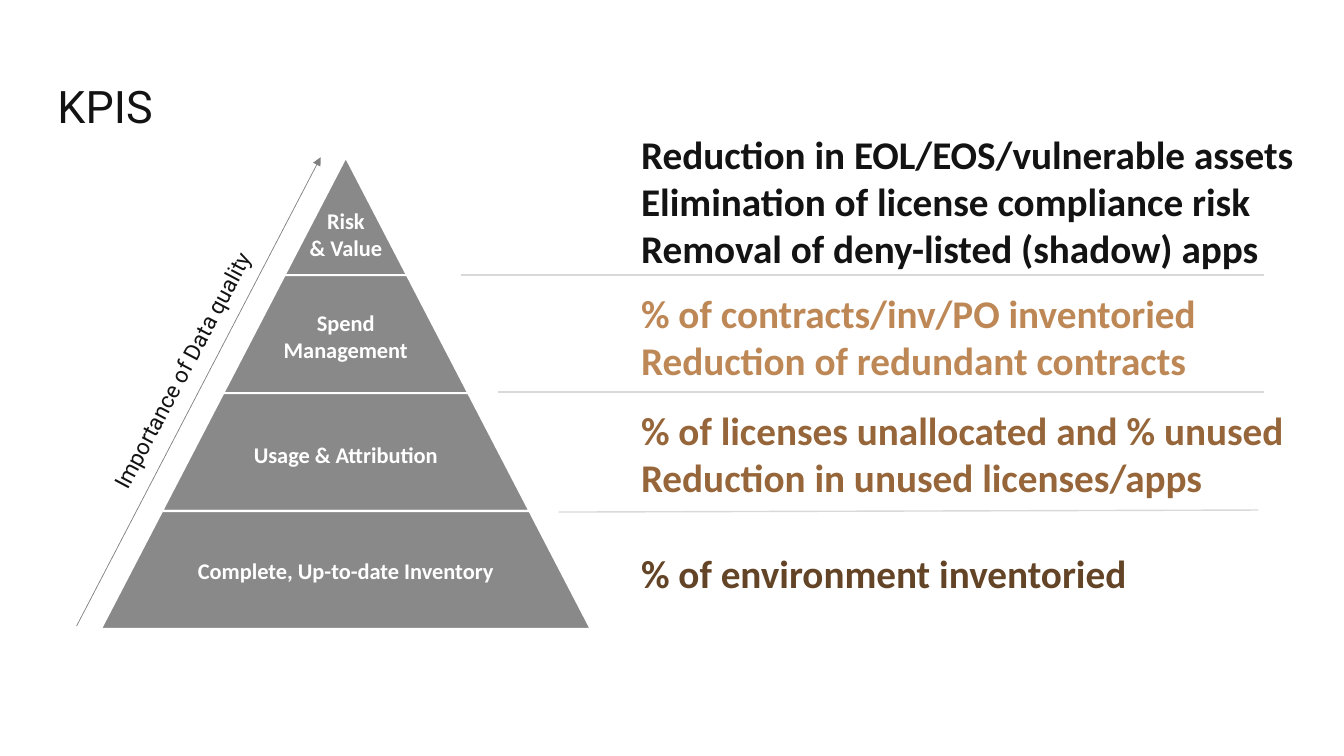
from lxml import etree
from pptx import Presentation
from pptx.dml.color import RGBColor
from pptx.enum import dml, shapes, text
from pptx.oxml import ns
from pptx.util import Inches, Pt

INK, WHITE, TIER_GREY = "131313", "FFFFFF", "898989"

# label lines, label top, label width, label height
TIERS = [
    (["Risk", "& Value"], 2.01, 1.12, 0.64),
    (["Spend", "Management"], 3.02, 2.07, 0.64),
    (["Usage & Attribution"], 4.33, 2.77, 0.37),
    (["Complete, Up-to-date Inventory"], 5.48, 3.2, 0.37),
]
# KPI lines, colour, top, width, height
KPIS = [
    (["Reduction in EOL/EOS/vulnerable assets",
      "Elimination of license compliance risk",
      "Removal of deny-listed (shadow) apps"], INK, 1.24, 6.81, 1.51),
    (["% of contracts/inv/PO inventoried",
      "Reduction of redundant contracts"], "BE8856", 2.82, 6.81, 1.04),
    (["% of licenses unallocated and % unused",
      "Reduction in unused licenses/apps"], "96663A", 3.98, 6.94, 1.04),
    (["% of environment inventoried"], "644426", 5.4, 5.4, 0.57),
]
SEPARATORS = [
    ((4.57, 2.73), (12.54, 2.73)),
    ((4.94, 3.89), (12.54, 3.89)),
    ((5.54, 5.08), (12.48, 5.06)),
]


def paint(color, hex_value):
    color.rgb = RGBColor.from_string(hex_value)


def style_font(font, name, size, color, bold=False):
    font.name, font.size, font.bold = name, Pt(size), bold
    font.fill.solid()
    paint(font.fill.fore_color, color)


def add_text(slide, box, lines, font, align=text.PP_ALIGN.LEFT,
             anchor=text.MSO_ANCHOR.TOP):
    """Place one paragraph per line; font holds the style_font arguments."""
    textbox = slide.shapes.add_textbox(*map(Inches, box))
    frame = textbox.text_frame
    frame.word_wrap = True
    frame.auto_size = text.MSO_AUTO_SIZE.SHAPE_TO_FIT_TEXT
    frame.vertical_anchor = anchor
    frame.text = "\n".join(lines)
    for paragraph in frame.paragraphs:
        paragraph.alignment = align
        style_font(paragraph.font, *font)
    return textbox


def add_line(slide, start, end, color, width):
    line = slide.shapes.add_connector(
        shapes.MSO_CONNECTOR.STRAIGHT, *map(Inches, (*start, *end)))
    paint(line.line.color, color)
    line.line.width = Pt(width)
    etree.SubElement(line._element.spPr, ns.qn("a:effectLst"))
    return line


def add_title(slide, box, wording):
    title = slide.shapes.title
    title.left, title.top, title.width, title.height = map(Inches, box)
    frame = title.text_frame
    frame.text = wording
    frame.vertical_anchor = text.MSO_ANCHOR.BOTTOM
    paragraph = frame.paragraphs[0]
    paragraph.alignment = text.PP_ALIGN.LEFT
    paragraph.line_spacing = 0.9
    style_font(paragraph.font, "Roboto", 32, INK)


def add_pyramid(slide, left, top, width, height):
    """Slice a triangle into equally high tiers and label each one."""
    center = left + width / 2
    tier_height = height / len(TIERS)
    half_step = width / 2 / len(TIERS)

    for i in range(len(TIERS)):
        upper, lower = top + i * tier_height, top + (i + 1) * tier_height
        upper_half, lower_half = i * half_step, (i + 1) * half_step
        corners = [(center - lower_half, lower), (center - upper_half, upper),
                   (center + upper_half, upper), (center + lower_half, lower)]
        points = [(Inches(x), Inches(y)) for x, y in corners]
        builder = slide.shapes.build_freeform(*points[0], scale=1.0)
        builder.add_line_segments(points[1:], close=True)
        tier = builder.convert_to_shape()
        tier.shadow.inherit = False
        tier.fill.solid()
        paint(tier.fill.fore_color, TIER_GREY)
        paint(tier.line.color, WHITE)
        tier.line.width = Pt(1.5)

    for lines, label_top, label_width, label_height in TIERS:
        box = (center - label_width / 2, label_top, label_width, label_height)
        add_text(slide, box, lines, ("Calibri", 16, WHITE, True),
                 text.PP_ALIGN.CENTER)


def add_quality_arrow(slide, start, end, caption_box):
    arrow = add_line(slide, start, end, "808080", 0.5)
    arrow.line.dash_style = dml.MSO_LINE.SOLID
    etree.SubElement(arrow.line._get_or_add_ln(), ns.qn("a:tailEnd"),
                     type="triangle")
    caption = add_text(slide, caption_box, ["Importance of Data quality"],
                       ("Roboto", 16, INK), text.PP_ALIGN.CENTER)
    caption.rotation = 298


def add_kpis(slide, left):
    for start, end in SEPARATORS:
        add_line(slide, start, end, "D9D9D9", 1)
    for lines, color, top, width, height in KPIS:
        add_text(slide, (left, top, width, height), lines,
                 ("Calibri", 28, color, True), anchor=text.MSO_ANCHOR.MIDDLE)


def main():
    deck = Presentation()
    deck.slide_width, deck.slide_height = Inches(13.33), Inches(7.5)
    slide = deck.slides.add_slide(deck.slide_layouts.get_by_name("Title Only"))
    add_title(slide, (0.47, 0.31, 11.65, 1.06), "KPIS")
    add_pyramid(slide, 1, 1.56, 4.86, 4.68)
    add_quality_arrow(slide, (0.76, 6.21), (3.18, 1.56),
                      (-0.05, 3.49, 3.71, 0.37))
    add_kpis(slide, 6.26)
    deck.save("out.pptx")


if __name__ == "__main__":
    main()
